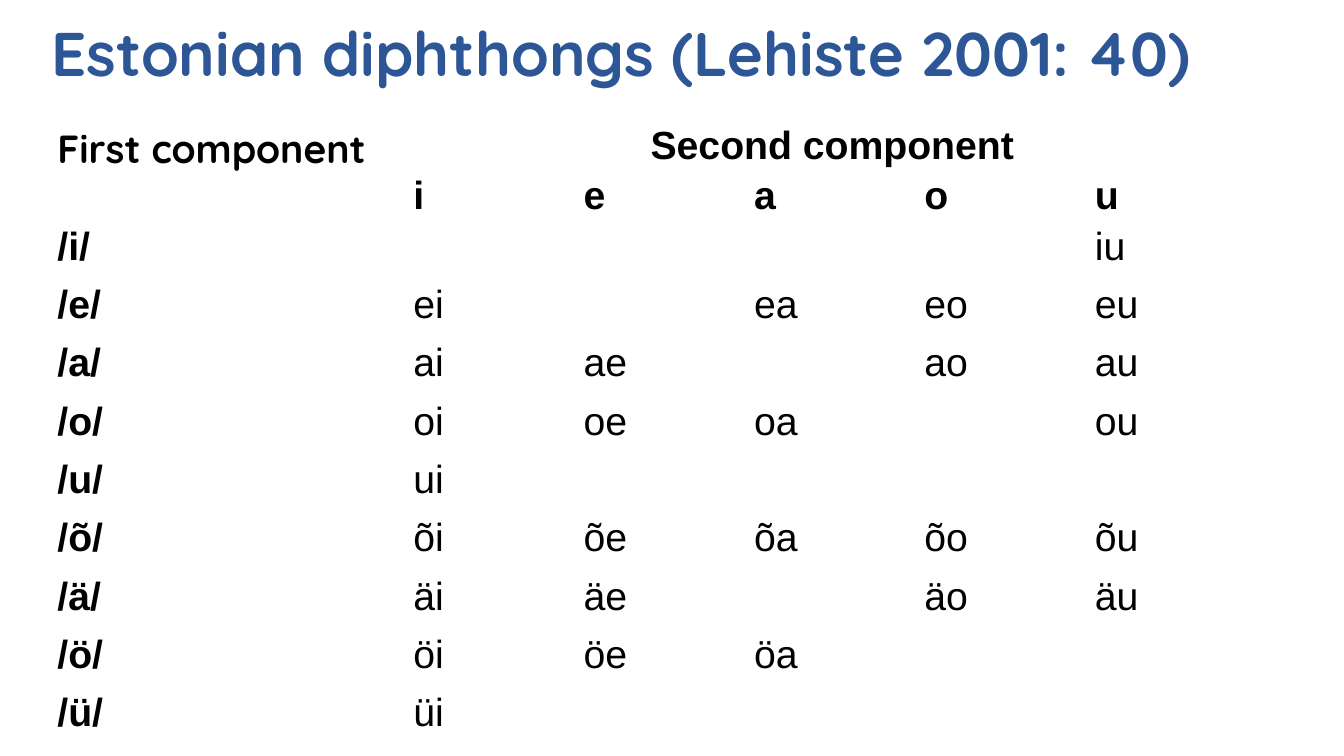
from pptx import Presentation
from pptx.dml.color import RGBColor
from pptx.enum.text import MSO_ANCHOR as Anchor, PP_ALIGN as Align
from pptx.util import Inches, Pt

COLORS = {"title": "2C5696", "text": "000000"}
HEADING_FONT, BODY_FONT = "Quicksand", "Arial"
SECOND_VOWELS = "ieaou"
# First component -> second components it combines with
DIPHTHONGS = {
    "i": "u", "e": "iaou", "a": "ieou", "o": "ieau", "u": "i",
    "õ": "ieaou", "ä": "ieou", "ö": "iea", "ü": "i",
}
HEADER_ROWS = 2


def write(frame, text, *, size=28, font=BODY_FONT, color="text",
          bold=False, align=Align.LEFT, spacing=1.0):
    para = frame.paragraphs[0]
    para.alignment, para.line_spacing = align, spacing
    span = para.add_run()
    span.text = text
    span.font.size, span.font.name, span.font.bold = Pt(size), font, bold
    span.font.color.rgb = RGBColor.from_string(COLORS[color])


def add_title(page, left, top, width, height):
    box = page.shapes.add_textbox(*map(Inches, (left, top, width, height)))
    box.text_frame.word_wrap = True
    box.text_frame.vertical_anchor = Anchor.MIDDLE
    write(box.text_frame, "Estonian diphthongs (Lehiste 2001: 40)", size=44,
          font=HEADING_FONT, color="title", bold=True, spacing=0.9)


def add_diphthong_table(page, left, top, width, height):
    row_count = HEADER_ROWS + len(DIPHTHONGS)
    column_count = 1 + len(SECOND_VOWELS)
    table = page.shapes.add_table(
        row_count, column_count, *map(Inches, (left, top, width, height))).table
    table.first_row = table.horz_banding = False

    # Grid: a wide label column, then equal vowel columns
    vowel_width, header_height = 1.69, 0.5
    label_width = width - vowel_width * len(SECOND_VOWELS)
    body_height = (height - HEADER_ROWS * header_height) / len(DIPHTHONGS)
    for index, column in enumerate(table.columns):
        column.width = Inches(vowel_width if index else label_width)
    for index, row in enumerate(table.rows):
        row.height = Inches(header_height if index < HEADER_ROWS else body_height)
    for cell in table.iter_cells():
        cell.fill.background()
        cell.margin_left = cell.margin_right = Inches(0.07)
        cell.margin_top = cell.margin_bottom = 0

    # Headers
    table.cell(0, 0).merge(table.cell(1, 0))
    table.cell(0, 1).merge(table.cell(0, column_count - 1))
    write(table.cell(0, 0).text_frame, "First component",
          font=HEADING_FONT, bold=True)
    write(table.cell(0, 1).text_frame, "Second component",
          bold=True, align=Align.CENTER)
    for column, vowel in enumerate(SECOND_VOWELS, 1):
        write(table.cell(1, column).text_frame, vowel, bold=True)

    # Vowel combinations
    for row, (first, partners) in enumerate(DIPHTHONGS.items(), HEADER_ROWS):
        write(table.cell(row, 0).text_frame, f"/{first}/", bold=True)
        for second in partners:
            column = 1 + SECOND_VOWELS.index(second)
            write(table.cell(row, column).text_frame, first + second)


def main():
    deck = Presentation()
    deck.slide_width, deck.slide_height = Inches(13.33), Inches(7.5)
    page = deck.slides.add_slide(deck.slide_layouts[6])
    add_title(page, 0.41, 0.12, 12.9, 0.88)
    add_diphthong_table(page, 0.5, 1.23, 11.98, 6.21)
    deck.save("out.pptx")


if __name__ == "__main__":
    main()
